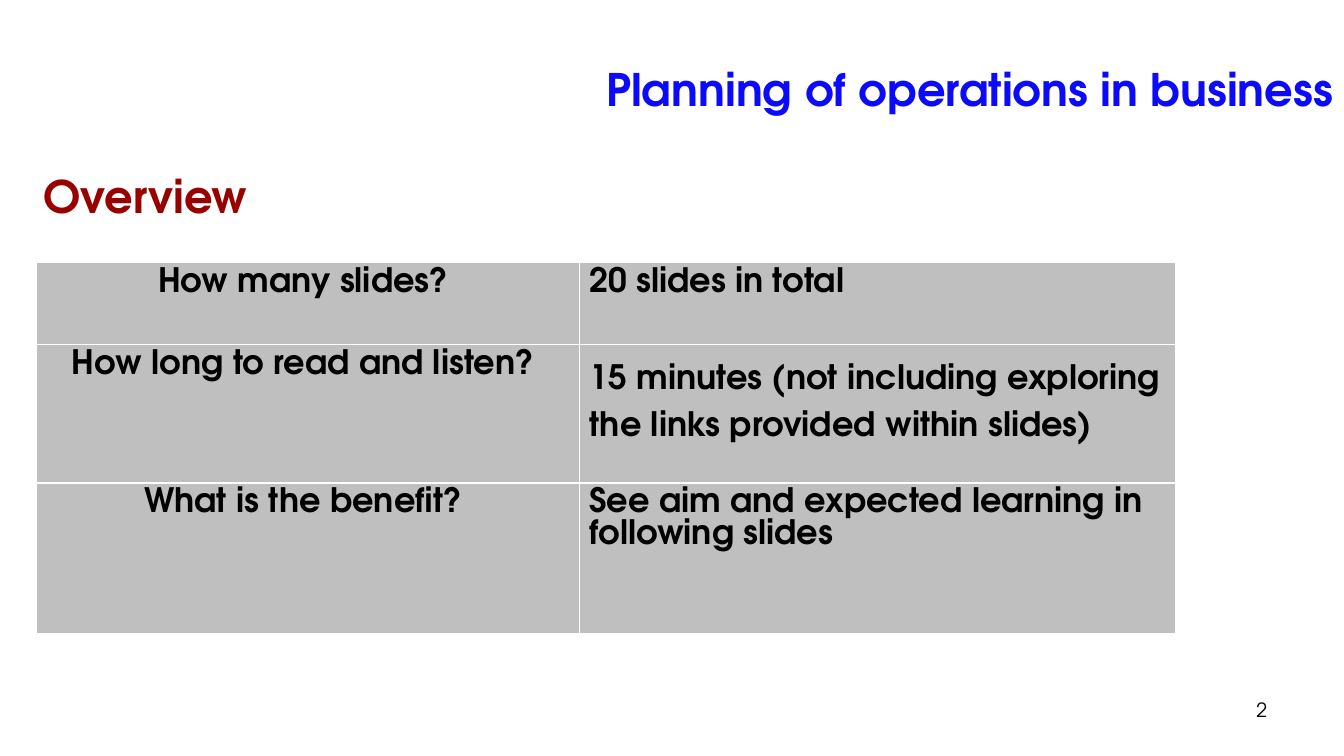
from lxml import etree
from pptx import Presentation
from pptx.dml.color import RGBColor
from pptx.enum.text import MSO_ANCHOR, PP_ALIGN
from pptx.oxml.ns import qn
from pptx.util import Pt

LEFT, CENTER, RIGHT = PP_ALIGN.LEFT, PP_ALIGN.CENTER, PP_ALIGN.RIGHT
TOP, BOTTOM = MSO_ANCHOR.TOP, MSO_ANCHOR.BOTTOM
FONT = "TeX Gyre Adventor"
COLORS = {"title": "0B0AFD", "heading": "990000", "text": "000000",
          "cell": "BFBFBF", "border": "FFFFFF"}
COLUMN_WIDTHS = (388, 425.6)
ROWS = (
    (58.2, "How many slides? ", "20 slides in total", 1),
    (99.2, "How long to read and listen? ",
     "15 minutes (not including exploring the links provided within slides)", 1.5),
    (107.8, "What is the benefit? ",
     "See aim and expected learning in following slides", 1),
)


def write_text(frame, text, size, color, bold=True, alignment=LEFT, line_spacing=1):
    """Write one formatted paragraph into a text frame."""
    paragraph = frame.paragraphs[0]
    paragraph.alignment = alignment
    paragraph.line_spacing = line_spacing
    run = paragraph.add_run()
    run.text = text
    for name, value in {"name": FONT, "size": Pt(size), "bold": bold}.items():
        setattr(run.font, name, value)
    run.font.color.rgb = RGBColor.from_string(COLORS[color])


def add_label(slide, box, text, size, color, anchor=TOP, top_inset=3.6, **options):
    """Place a wrapped text box in the given box."""
    frame = slide.shapes.add_textbox(*map(Pt, box)).text_frame
    settings = {"word_wrap": True, "vertical_anchor": anchor, "margin_top": Pt(top_inset)}
    for name, value in settings.items():
        setattr(frame, name, value)
    write_text(frame, text, size, color, **options)


def format_cell(cell):
    """Give a cell thin white borders and a grey fill."""
    properties = cell._tc.get_or_add_tcPr()
    for side in ("lnL", "lnR", "lnT", "lnB"):
        line = etree.SubElement(properties, qn(f"a:{side}"), w=str(Pt(1)))
        fill = etree.SubElement(line, qn("a:solidFill"))
        etree.SubElement(fill, qn("a:srgbClr"), val=COLORS["border"])
    cell.fill.solid()
    cell.fill.fore_color.rgb = RGBColor.from_string(COLORS["cell"])


def add_overview_table(slide, left, top):
    """Build the question and answer table from its top left corner."""
    width, height = sum(COLUMN_WIDTHS), sum(row[0] for row in ROWS)
    table = slide.shapes.add_table(
        len(ROWS), len(COLUMN_WIDTHS), Pt(left), Pt(top), Pt(width), Pt(height)).table
    for column, column_width in zip(table.columns, COLUMN_WIDTHS):
        column.width = Pt(column_width)
    for row, (row_height, question, answer, spacing) in zip(table.rows, ROWS):
        row.height = Pt(row_height)
        contents = ((question, CENTER, 1), (answer, LEFT, spacing))
        for cell, (text, alignment, line_spacing) in zip(row.cells, contents):
            format_cell(cell)
            write_text(cell.text_frame, text, 24, "text",
                       alignment=alignment, line_spacing=line_spacing)


def build_overview_slide(presentation):
    """Add the overview slide with its title, heading, table and number."""
    slide = presentation.slides.add_slide(presentation.slide_layouts[6])
    add_label(slide, (66.2, 0, 893.5, 86.4), "Planning of operations in business",
              32, "title", anchor=BOTTOM, alignment=RIGHT)
    add_label(slide, (23.8, 107.3, 233.3, 48.2), "Overview", 32, "heading", top_inset=13)
    add_overview_table(slide, 25.9, 187.6)
    add_label(slide, (688.3, 491.8, 223.9, 37.4), "2", 14, "text",
              top_inset=7, bold=False, alignment=RIGHT)


def main():
    """Create and save the presentation."""
    presentation = Presentation()
    presentation.slide_width, presentation.slide_height = Pt(960), Pt(540)
    build_overview_slide(presentation)
    presentation.save("out.pptx")


if __name__ == "__main__":
    main()
